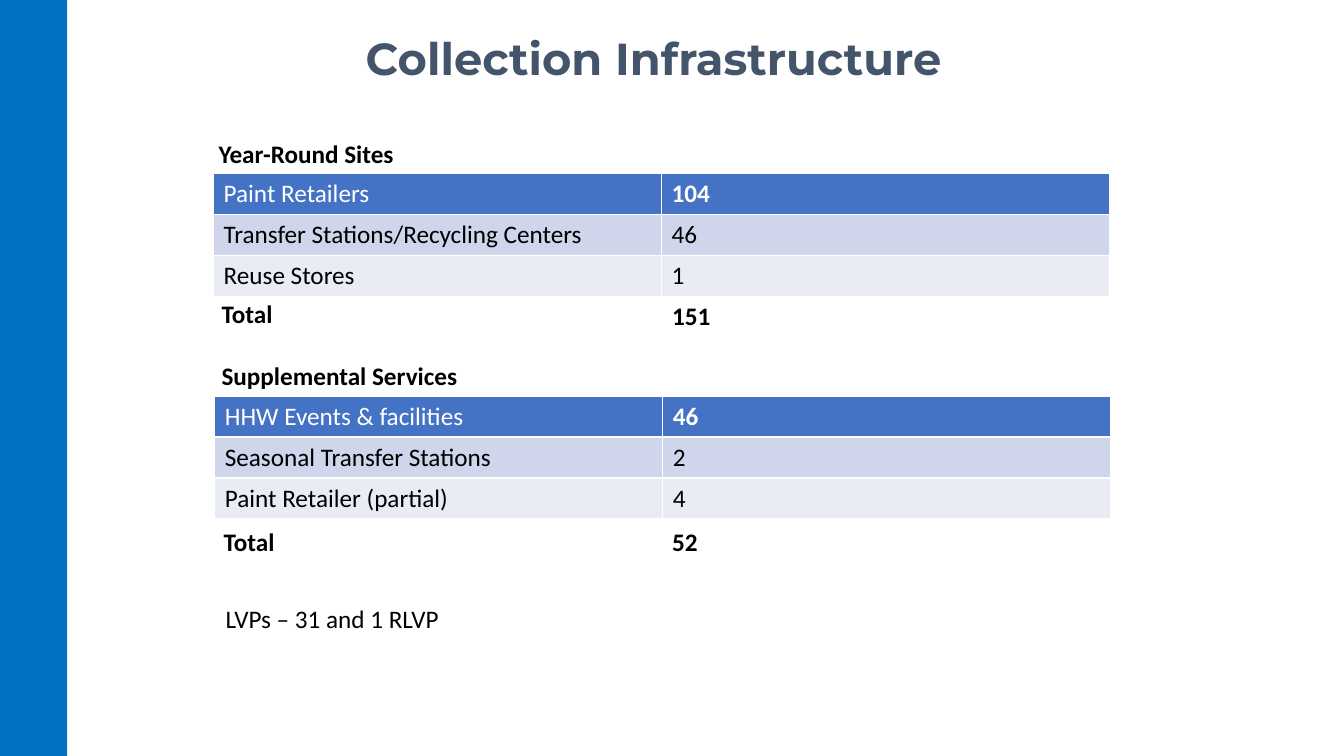
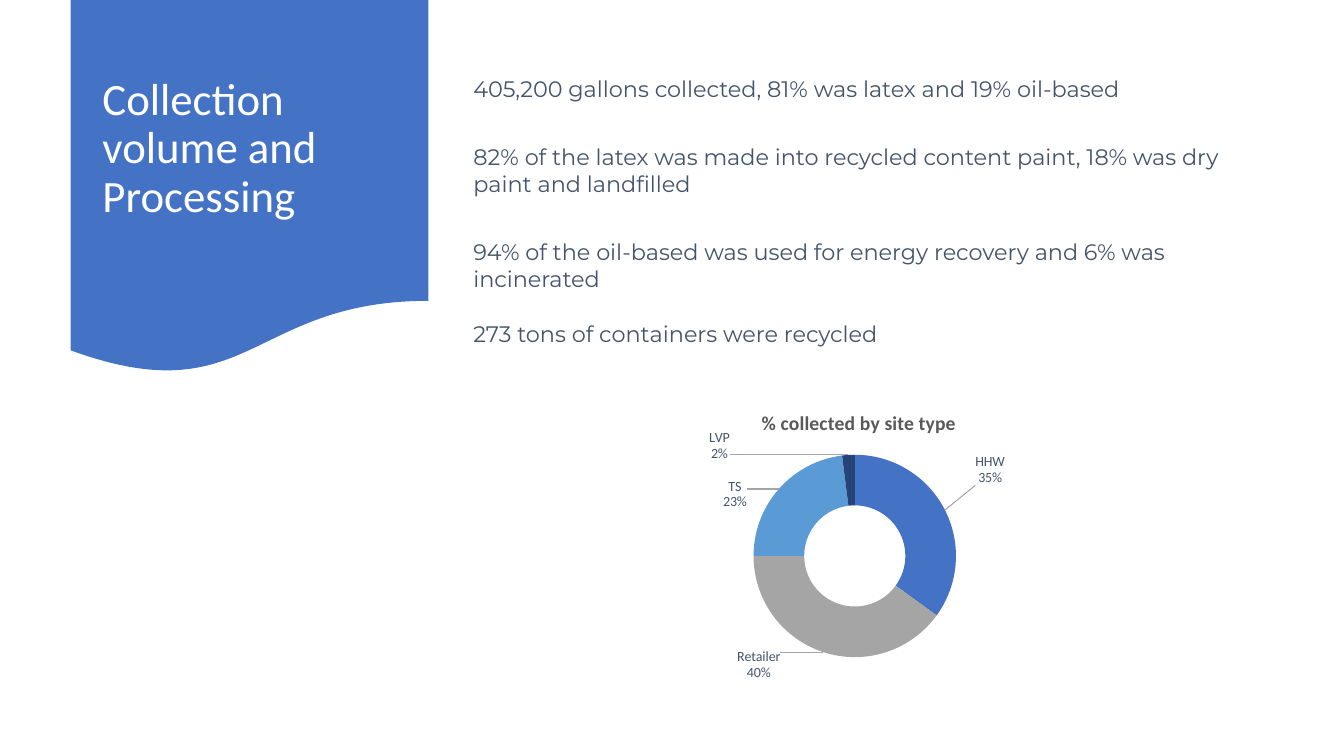
import pptx
import pptx.chart.data
import pptx.dml.color
import pptx.enum.chart
import pptx.enum.shapes
import pptx.enum.text
import pptx.oxml
import pptx.oxml.ns
import pptx.util

Pt = pptx.util.Pt
RGB = pptx.dml.color.RGBColor.from_string
qn = pptx.oxml.ns.qn
SHAPE = pptx.enum.shapes.MSO_SHAPE
ANCHOR = pptx.enum.text.MSO_ANCHOR

COLORS = {
    "white": "FFFFFF", "black": "000000", "slate": "44546A", "band": "0070C0",
    "blue": "4472C4", "row_dark": "CFD5EA", "row_light": "E9EBF5",
    "gray": "A5A5A5", "sky": "5B9BD5", "navy": "264478", "chart_title": "595959",
}
HEADING = {"name": "Montserrat", "size": Pt(32), "bold": True}
PANEL_TITLE = {"name": "Calibri", "size": Pt(32), "bold": False}
LABEL = {"name": "Calibri", "size": Pt(18), "bold": True}
PLAIN = {"name": "Calibri", "size": Pt(18), "bold": False}
FACT = {"name": "Montserrat", "size": Pt(16), "bold": False}
CHART_TITLE = {"name": "Calibri", "size": Pt(14), "bold": True}


def write(tf, text, style, color):
    """Put one left-aligned, wrapped paragraph in a text frame and return it."""
    tf.word_wrap = True
    p = tf.paragraphs[0]
    p.alignment = pptx.enum.text.PP_ALIGN.LEFT
    r = p.add_run()
    r.text = text
    for name, value in style.items():
        setattr(r.font, name, value)
    r.font.color.rgb = RGB(COLORS[color])
    return p


def set_layout(element, index, target="", **fractions):
    """Give a chart element a manual layout as its child number index."""
    for old in element.findall(qn("c:layout")):
        element.remove(old)
    values = "".join(f'<c:{k} val="{v}"/>' for k, v in fractions.items())
    element.insert(index, pptx.oxml.parse_xml(
        f'<c:layout {pptx.oxml.ns.nsdecls("c")}><c:manualLayout>'
        f"{target}{values}</c:manualLayout></c:layout>"))


prs = pptx.Presentation()
prs.slide_width, prs.slide_height = Pt(960), Pt(540)

# Each slide: title, its box, style, colour, anchor, then the band shape, box and fill
slides = [
    ("Collection Infrastructure", (254, 18.5, 480, 46), HEADING, "slate", ANCHOR.TOP,
     SHAPE.RECTANGLE, (0, 0, 48, 540), "band"),
    ("Collection volume and Processing", (66, 13.5, 224, 186.5), PANEL_TITLE, "white",
     ANCHOR.MIDDLE, SHAPE.FLOWCHART_DOCUMENT, (50.4, 0, 255.6, 268), "blue"),
]
for text, box, style, color, anchor, kind, band_box, fill in slides:
    s = prs.slides.add_slide(prs.slide_layouts[5])
    title = s.shapes.title
    title.left, title.top, title.width, title.height = map(Pt, box)
    title.text_frame.auto_size = pptx.enum.text.MSO_AUTO_SIZE.NONE
    title.text_frame.vertical_anchor = anchor
    write(title.text_frame, text, style, color).line_spacing = 0.9 if style is PANEL_TITLE else 1.0

    band = s.shapes.add_shape(kind, *map(Pt, band_box))
    band.shadow.inherit = False
    band.fill.solid()
    band.fill.fore_color.rgb = RGB(COLORS[fill])
    band.line.fill.background()
    title._element.addprevious(band._element)

sites, volume = prs.slides

# Collection sites
tables = [
    (152.6, 124, [("Paint Retailers", "104"),
                  ("Transfer Stations/Recycling Centers", "46"),
                  ("Reuse Stores", "1")]),
    (153.4, 283, [("HHW Events & facilities", "46"),
                  ("Seasonal Transfer Stations", "2"),
                  ("Paint Retailer (partial)", "4")]),
]
row_fills = ["blue", "row_dark", "row_light"]
for left, top, rows in tables:
    table = sites.shapes.add_table(3, 2, Pt(left), Pt(top), Pt(640), Pt(87.6)).table
    for i, row in enumerate(rows):
        for j, text in enumerate(row):
            cell = table.cell(i, j)
            cell.fill.solid()
            cell.fill.fore_color.rgb = RGB(COLORS[row_fills[i]])
            is_head = i == 0
            write(cell.text_frame, text, LABEL if is_head and j == 1 else PLAIN,
                  "white" if is_head else "black")

site_texts = [
    ("Year-Round Sites", 149, 95, 480, LABEL),
    ("Total", 151.2, 209.5, 52, LABEL),
    ("151", 473, 211, 43, LABEL),
    ("Supplemental Services", 151.2, 254, 480, LABEL),
    ("Total", 152.6, 372.5, 480, LABEL),
    ("52", 473, 372.5, 480, LABEL),
    ("LVPs – 31 and 1 RLVP", 154, 427.5, 170, PLAIN),
]
for text, left, top, width, style in site_texts:
    tb = sites.shapes.add_textbox(Pt(left), Pt(top), Pt(width), Pt(29))
    write(tb.text_frame, text, style, "black")

# Volume and processing
facts = [
    ("405,200 gallons collected, 81% was latex and 19% oil-based", 50.4, 578, 114),
    ("82% of the latex was made into recycled content paint, 18% was dry paint and landfilled",
     98.8, 578, 107),
    ("94% of the oil-based was used for energy recovery and 6% was incinerated", 166.5, 578, 45),
    ("273 tons of containers were recycled", 224.8, 346, 26.6),
]
for text, top, width, height in facts:
    tb = volume.shapes.add_textbox(Pt(331), Pt(top), Pt(width), Pt(height))
    write(tb.text_frame, text, FACT, "slate").space_after = Pt(6)

# Site type, share, slice colour, label offset as fractions of the chart
slices = [
    ("HHW", 35, "blue", 0.14, -0.18),
    ("Retailer", 40, "gray", -0.15, 0.13),
    ("TS", 23, "sky", -0.13, -0.04),
    ("LVP", 2, "navy", -0.27, -0.12),
]
data = pptx.chart.data.CategoryChartData()
data.categories = [row[0] for row in slices]
data.add_series("Series 1", [row[1] for row in slices])
chart = volume.shapes.add_chart(
    pptx.enum.chart.XL_CHART_TYPE.DOUGHNUT, Pt(437.8), Pt(279.4), Pt(345.6), Pt(206.6), data).chart
chart.has_legend = False
chart.font.name, chart.font.size = "Calibri", Pt(10)
chart.font.color.rgb = RGB(COLORS["slate"])
chart.has_title = True
write(chart.chart_title.text_frame, "% collected by site type", CHART_TITLE, "chart_title")
set_layout(chart.chart_title._element, 1, xMode="edge", yMode="edge", x=0.3, y=0.05)

plot = chart.plots[0]
plot.vary_by_categories = True
plot._element.find(qn("c:holeSize")).set("val", "37")
set_layout(plot._element.getparent(), 0, '<c:layoutTarget val="inner"/>',
           xMode="edge", yMode="edge", x=0.29, y=0.22, w=0.42, h=0.7)

series = plot.series[0]
for i, row in enumerate(slices):
    fill = series.points[i].format.fill
    fill.solid()
    fill.fore_color.rgb = RGB(COLORS[row[2]])

label_format = (
    '<c:numFmt formatCode="0%" sourceLinked="0"/>'
    '<c:showLegendKey val="0"/><c:showVal val="0"/><c:showCatName val="1"/>'
    '<c:showSerName val="0"/><c:showPercent val="1"/><c:showBubbleSize val="0"/>'
    "<c:separator>\n</c:separator>")
point_labels = "".join(
    f'<c:dLbl><c:idx val="{i}"/>{label_format}</c:dLbl>' for i in range(len(slices)))
labels = pptx.oxml.parse_xml(
    f'<c:dLbls {pptx.oxml.ns.nsdecls("c", "a")}>{point_labels}{label_format}'
    '<c:showLeaderLines val="1"/><c:leaderLines><c:spPr><a:ln w="9525"><a:solidFill>'
    f'<a:srgbClr val="{COLORS["gray"]}"/></a:solidFill></a:ln></c:spPr></c:leaderLines></c:dLbls>')
for label, row in zip(labels.findall(qn("c:dLbl")), slices):
    set_layout(label, 1, x=row[3], y=row[4])
series._element.find(qn("c:cat")).addprevious(labels)

prs.save("out.pptx")
